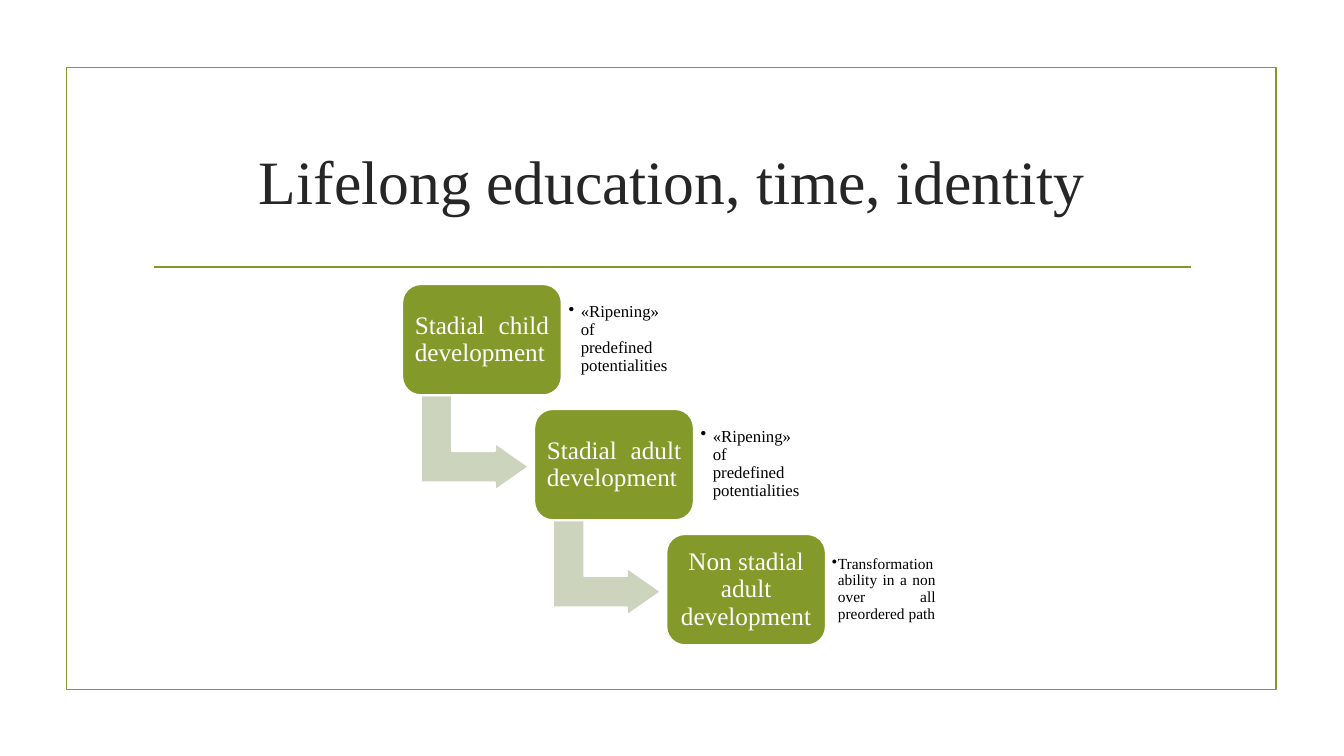
import pptx
import pptx.dml.color
import pptx.enum.shapes
import pptx.enum.text
import pptx.oxml.ns
import pptx.util
from lxml import etree

Inches = pptx.util.Inches
RGBColor = pptx.dml.color.RGBColor
Shapes = pptx.enum.shapes.MSO_SHAPE
Align = pptx.enum.text.PP_ALIGN
qn = pptx.oxml.ns.qn

GREEN = RGBColor(0x83, 0x99, 0x2A)
PALE_GREEN = RGBColor(0xCD, 0xD4, 0xBE)
WHITE = RGBColor(0xFF, 0xFF, 0xFF)
BLACK = RGBColor(0x00, 0x00, 0x00)
TITLE_GREY = RGBColor(0x26, 0x26, 0x26)

FIRST_LEFT, FIRST_TOP = 3.99, 2.82
STEP_X, STEP_Y = 1.31, 1.24
CARD_WIDTH, CARD_HEIGHT = 1.58, 1.1
RIPENING = "«Ripening» of predefined potentialities"
# Stage, its alignment, its note, note size, note indent, note margin
STAGES = [
    ("Stadial child development", Align.JUSTIFY, RIPENING, 12, 0.12, 0.07),
    ("Stadial adult development", Align.JUSTIFY, RIPENING, 12, 0.12, 0.07),
    ("Non stadial adult development", Align.CENTER,
     "Transformation ability in a non over all preordered path", 11, 0.06, 0.06),
]


def add_shape(kind, left, top, width, height, fill, line):
    shape = slide.shapes.add_shape(
        kind, Inches(left), Inches(top), Inches(width), Inches(height))
    shape.shadow.inherit = False
    if fill is None:
        shape.fill.background()
    else:
        shape.fill.solid()
        shape.fill.fore_color.rgb = fill
    shape.line.color.rgb = line
    shape.line.width = pptx.util.Pt(1.25)
    return shape


def write_text(shape, text, size, color, alignment, margin, spacing=0.9):
    """Fill a shape with one middle-anchored paragraph and return it."""
    frame = shape.text_frame
    frame.word_wrap = True
    frame.auto_size = pptx.enum.text.MSO_AUTO_SIZE.NONE
    frame.vertical_anchor = pptx.enum.text.MSO_ANCHOR.MIDDLE
    frame.margin_left = frame.margin_right = Inches(margin)
    frame.margin_top = frame.margin_bottom = Inches(margin)
    paragraph = frame.paragraphs[0]
    paragraph.alignment = alignment
    paragraph.line_spacing = spacing
    run = paragraph.add_run()
    run.text = text
    run.font.name = "Times New Roman"
    run.font.size = pptx.util.Pt(size)
    run.font.color.rgb = color
    return paragraph


presentation = pptx.Presentation()
presentation.slide_width = Inches(13.33)
presentation.slide_height = Inches(7.5)
slide = presentation.slides.add_slide(presentation.slide_layouts[5])

add_shape(Shapes.RECTANGLE, 0.66, 0.67, 12, 6.17, None, GREEN)

rule = slide.shapes.add_connector(
    pptx.enum.shapes.MSO_CONNECTOR.STRAIGHT,
    Inches(1.53), Inches(2.65), Inches(11.81), Inches(2.65))
rule.line.color.rgb = GREEN
rule.line.width = pptx.util.Pt(1.25)
etree.SubElement(rule._element.spPr, qn("a:effectLst"))

title = slide.shapes.title
title.left, title.top = Inches(1.42), Inches(1.07)
title.width, title.height = Inches(10.5), Inches(1.43)
write_text(title, "Lifelong education, time, identity", 44, TITLE_GREY,
           Align.CENTER, 0.1, 1.0)

for index, (stage, alignment, note, note_size, indent, margin) in enumerate(STAGES):
    left = FIRST_LEFT + index * STEP_X
    top = FIRST_TOP + index * STEP_Y

    if index < len(STAGES) - 1:
        arrow = add_shape(Shapes.BENT_UP_ARROW, left + 0.25, top + 1.04,
                          0.94, 1.07, PALE_GREEN, WHITE)
        arrow.rotation = 90
        for position, value in enumerate((0.328, 0.25, 0.358)):
            arrow.adjustments[position] = value

    card = add_shape(Shapes.ROUNDED_RECTANGLE, left, top,
                     CARD_WIDTH, CARD_HEIGHT, GREEN, WHITE)
    write_text(card, stage, 18, WHITE, alignment, 0.07)

    note_box = slide.shapes.add_textbox(
        Inches(left + CARD_WIDTH), Inches(top + 0.1), Inches(1.15), Inches(0.89))
    paragraph = write_text(note_box, note, note_size, BLACK, Align.JUSTIFY, margin)
    properties = paragraph._p.get_or_add_pPr()
    properties.set("marL", str(Inches(indent)))
    properties.set("indent", str(-Inches(indent)))
    etree.SubElement(properties, qn("a:buChar")).set("char", "•")

presentation.save("out.pptx")
